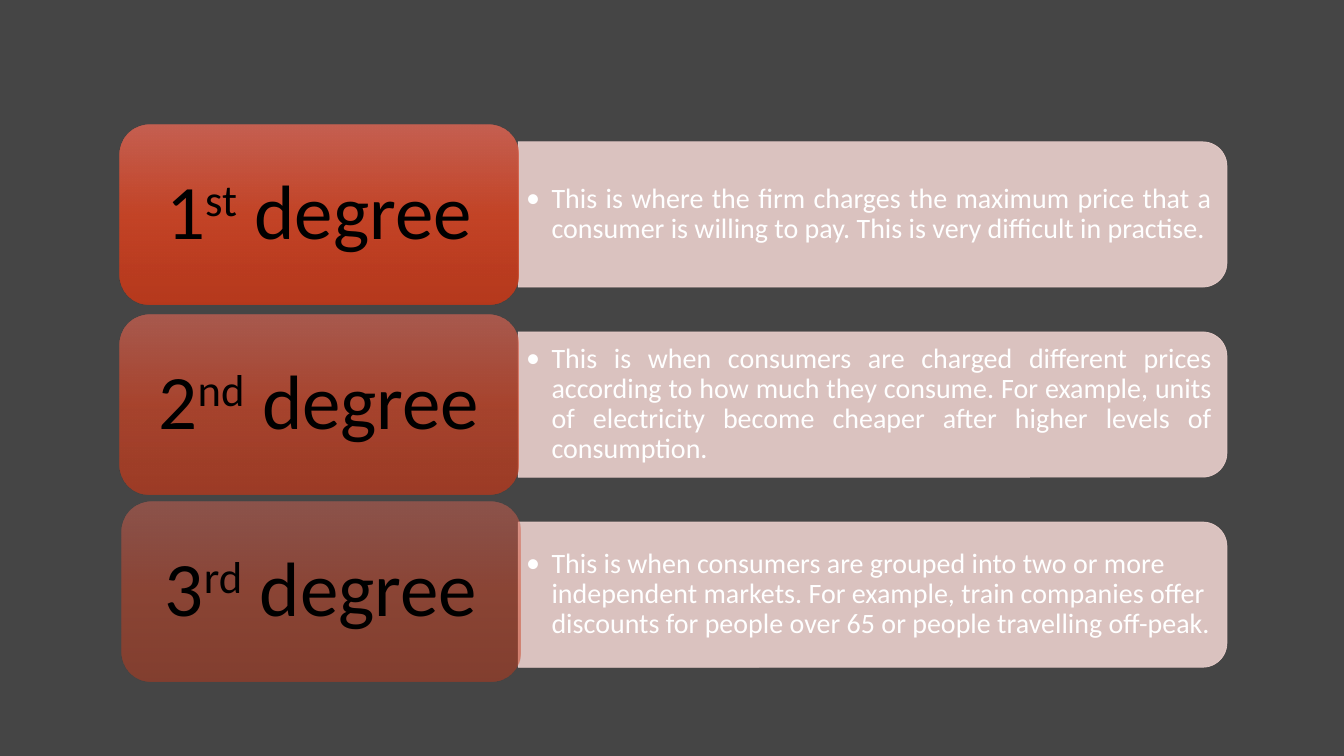
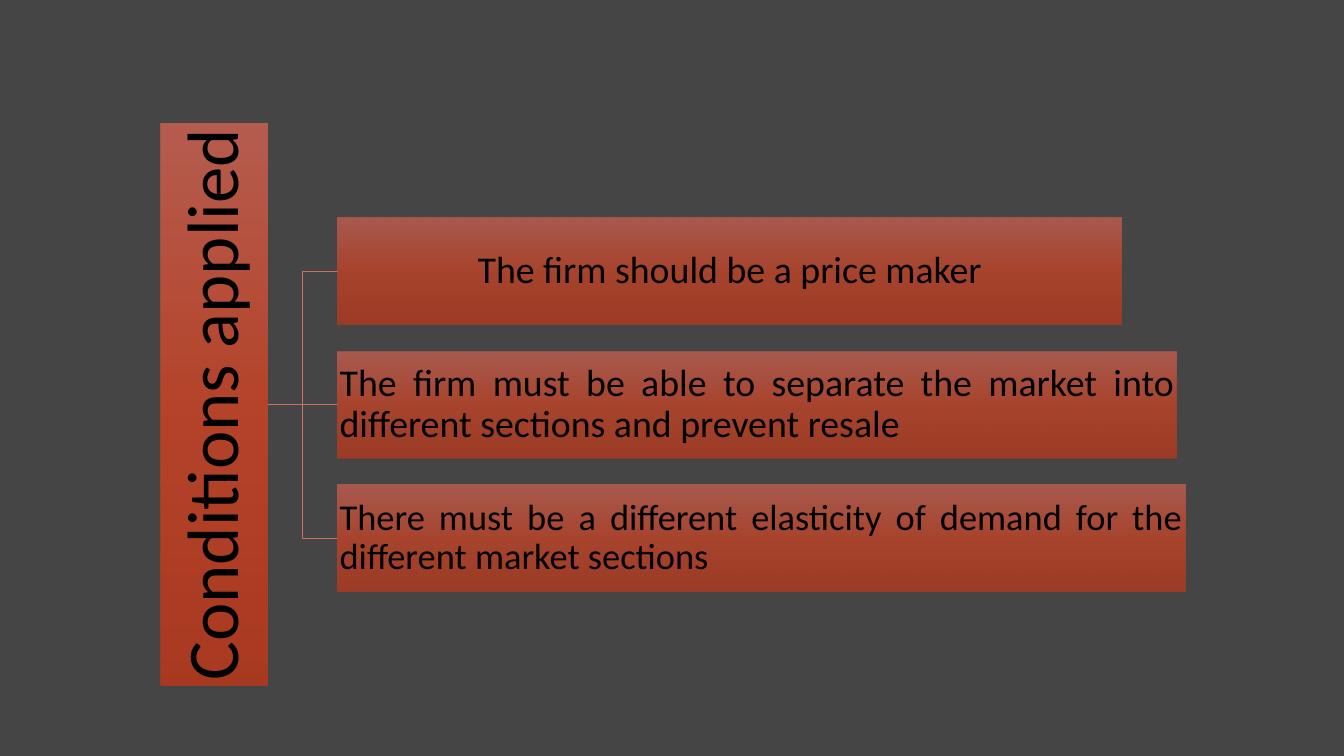
from copy import deepcopy

from lxml import etree
from pptx import Presentation
from pptx.dml.color import RGBColor
from pptx.enum import shapes, text
from pptx.oxml import ns
from pptx.util import Cm, Pt

CHARCOAL = RGBColor(0x45, 0x45, 0x45)
BLUSH = RGBColor(0xEB, 0xD0, 0xCD)
CORAL = RGBColor(0xCF, 0x70, 0x64)
BLACK = RGBColor(0, 0, 0)
WHITE = RGBColor(0xFF, 0xFF, 0xFF)
RED_STOPS = (
    (0, RGBColor(0xD3, 0x63, 0x53)),
    (0.5, RGBColor(0xD1, 0x44, 0x24)),
    (1, RGBColor(0xC1, 0x38, 0x19)),
)

FONT = "Calibri"
LINE_WIDTH = Pt(0.5)
CENTER = text.PP_ALIGN.CENTER
JUSTIFY = text.PP_ALIGN.JUSTIFY
LEFT = text.PP_ALIGN.LEFT

DEGREES = (
    ("1", "st", 90, JUSTIFY, (0, 0),
     "This is where the firm charges the maximum price that a consumer is "
     "willing to pay. This is very difficult in practise."),
    ("2", "nd", 70, JUSTIFY, (0, 0),
     "This is when consumers are charged different prices according to how "
     "much they consume. For example, units of electricity become cheaper "
     "after higher levels of consumption."),
    ("3", "rd", 50, LEFT, (0.05, -0.08),
     "This is when consumers are grouped into two or more independent markets. "
     "For example, train companies offer discounts for people over 65 or "
     "people travelling off-peak."),
)
CONDITIONS = (
    ("The firm should be a price maker", 19.76, 27, CENTER),
    ("The firm must be able to separate the market into different sections "
     "and prevent resale", 21.13, 27, JUSTIFY),
    ("There must be a different elasticity of demand for the different "
     "market sections", 21.36, 26, JUSTIFY),
)


def apply(target, values):
    for name, value in values.items():
        setattr(target, name, value)


def set_opacity(shape, percent):
    for color in shape.element.spPr.iter(ns.qn("a:srgbClr")):
        etree.SubElement(color, ns.qn("a:alpha"), val=str(percent * 1000))


def fill_red(shape, opacity):
    shape.fill.gradient()
    shape.fill.gradient_angle = 270
    stop_list = shape.element.spPr.find(".//" + ns.qn("a:gsLst"))
    stop_list.append(deepcopy(stop_list[-1]))
    for stop, (position, color) in zip(shape.fill.gradient_stops, RED_STOPS):
        stop.position = position
        stop.color.rgb = color
    shape.line.fill.background()
    set_opacity(shape, opacity)


def write(shape, pieces, size, align, color=BLACK, margins=(0.05, 0.05)):
    frame = shape.text_frame
    side, edge = margins
    apply(frame, {
        "word_wrap": True,
        "auto_size": text.MSO_AUTO_SIZE.NONE,
        "vertical_anchor": text.MSO_ANCHOR.MIDDLE,
        "margin_left": Cm(side), "margin_right": Cm(side),
        "margin_top": Cm(edge), "margin_bottom": Cm(edge),
    })
    para = frame.paragraphs[0]
    apply(para, {"alignment": align, "line_spacing": 0.9})
    for words, baseline in pieces:
        span = para.add_run()
        span.text = words
        apply(span.font, {"name": FONT, "size": Pt(size)})
        span.font.color.rgb = color
        if baseline:
            span.font._element.set("baseline", str(baseline * 1000))
    return para


def add_bullet(para, indent):
    properties = para._p.get_or_add_pPr()
    properties.set("marL", str(indent))
    properties.set("indent", str(-indent))
    etree.SubElement(properties, ns.qn("a:buFont"), typeface=FONT)
    etree.SubElement(properties, ns.qn("a:buChar"), char="•")


def add_box(page, kind, left, top, width, height):
    box = page.shapes.add_shape(kind, Cm(left), Cm(top), Cm(width), Cm(height))
    box.shadow.inherit = False
    return box


def add_band(page, left, middle, width, height, words, align):
    band = add_box(page, shapes.MSO_SHAPE.ROUND_2_SAME_RECTANGLE,
                   left + (width - height) / 2, middle - width / 2, height, width)
    band.rotation = 90
    band.fill.solid()
    band.fill.fore_color.rgb = BLUSH
    band.line.color.rgb = BLUSH
    band.line.width = LINE_WIDTH
    set_opacity(band, 90)
    label = page.shapes.add_textbox(Cm(left), Cm(middle - 1.65), Cm(width - 0.18), Cm(3.3))
    para = write(label, [(words, 0)], 20, align, WHITE, (0.2, 0.1))
    add_bullet(para, Cm(0.64))


def add_degree_row(page, left, top, width, height, degree):
    number, suffix, opacity, align, (shift_x, shift_y), words = degree
    box_width = 10.04
    add_band(page, left + box_width, top + height / 2, width - box_width, 3.66, words, align)
    box = add_box(page, shapes.MSO_SHAPE.ROUNDED_RECTANGLE,
                  left + shift_x, top + shift_y, box_width, height)
    fill_red(box, opacity)
    write(box, [(number, 0), (suffix, 30), (" degree", 0)], 55, CENTER, margins=(0.58, 0.28))


def add_link(page, start, end):
    straight = start[1] == end[1]
    kind = shapes.MSO_CONNECTOR.STRAIGHT if straight else shapes.MSO_CONNECTOR.ELBOW
    link = page.shapes.add_connector(kind, *(Cm(value) for value in start + end))
    link.line.color.rgb = CORAL
    link.line.width = LINE_WIDTH
    etree.SubElement(link.element.spPr, ns.qn("a:effectLst"))


def add_title_bar(page, left, top, width, height, words):
    bar = add_box(page, shapes.MSO_SHAPE.RECTANGLE, left, top, width, height)
    fill_red(bar, 80)
    title = page.shapes.title
    page.shapes.element.append(title.element)
    turn = (height - width) / 2
    apply(title, {
        "left": Cm(left - turn), "top": Cm(top + turn),
        "width": Cm(height), "height": Cm(width), "rotation": 270,
    })
    write(title, [(words, 0)], 52, CENTER)


def add_conditions(page, left, middle, height, step, hub):
    for index, (words, width, size, align) in enumerate(CONDITIONS):
        center = round(middle + (index - 1) * step, 2)
        add_link(page, (hub, middle), (left, center))
        box = add_box(page, shapes.MSO_SHAPE.RECTANGLE,
                      left, center - height / 2, width, height)
        fill_red(box, 70)
        write(box, [(words, 0)], size, align)


def build_degrees(deck):
    page = deck.slides.add_slide(deck.slide_layouts[6])
    for index, degree in enumerate(DEGREES):
        add_degree_row(page, 3.02, 3.13 + index * 4.79, 27.9, 4.55, degree)


def build_conditions(deck):
    page = deck.slides.add_slide(deck.slide_layouts[5])
    left, top, width, height = 4.06, 3.12, 2.69, 14.16
    middle = round(top + height / 2, 2)
    add_title_bar(page, left, top, width, height, "Conditions applied")
    add_conditions(page, 8.51, middle, 2.69, 3.36, left + width)


def main():
    deck = Presentation()
    apply(deck, {"slide_width": Cm(33.87), "slide_height": Cm(19.05)})
    backdrop = deck.slide_master.background.fill
    backdrop.solid()
    backdrop.fore_color.rgb = CHARCOAL
    build_degrees(deck)
    build_conditions(deck)
    deck.save("out.pptx")


if __name__ == "__main__":
    main()
